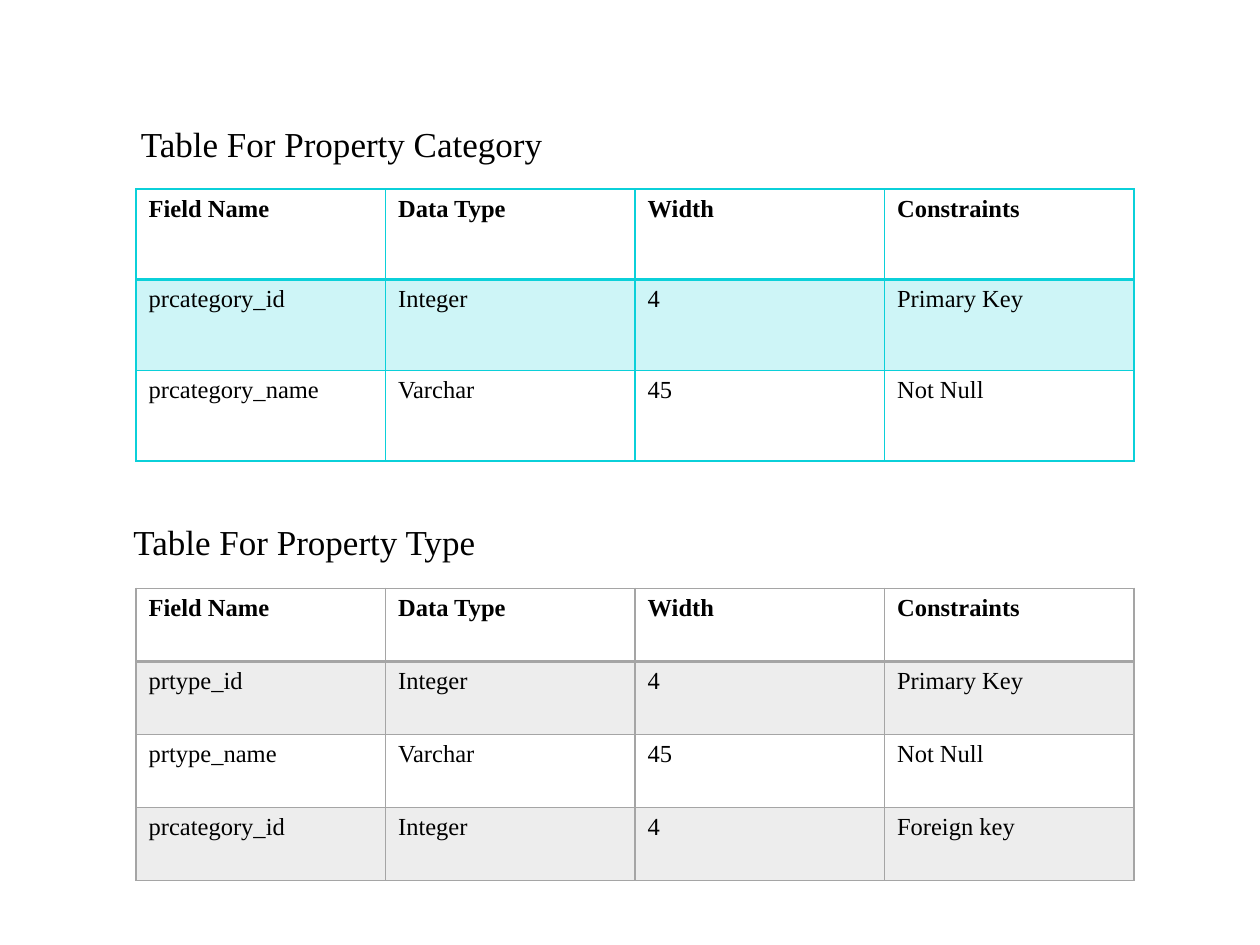
from dataclasses import dataclass

from lxml import etree
from pptx import Presentation
from pptx import util as u
from pptx.dml.color import RGBColor
from pptx.enum import text
from pptx.oxml.ns import qn

PX = 9144  # EMU per px, at 100 px to the inch
FONT = "Times New Roman"
BLACK = RGBColor(0x00, 0x00, 0x00)
TEAL = RGBColor(0x0B, 0xD0, 0xD9)
GRAY = RGBColor(0xA5, 0xA5, 0xA5)
LEFT, COL = 108, 198
HEAD = ("Field Name", "Data Type", "Width", "Constraints")


@dataclass
class Box:
    left: int
    top: int
    width: int
    height: int

    def emu(self) -> list[u.Emu]:
        return [u.Emu(n * PX) for n in (self.left, self.top, self.width, self.height)]


@dataclass
class Section:
    title: str
    label: Box
    top: int
    row: int
    color: RGBColor
    rule: float  # points of the line under the header
    fields: list[tuple[str, ...]]


SECTIONS = [
    Section("Table For Property Category", Box(102, 92, 340, 43), 150, 72, TEAL, 2.25, [
        ("prcategory_id", "Integer", "4", "Primary Key"),
        ("prcategory_name", "Varchar", "45", "Not Null"),
    ]),
    Section("Table For Property Type", Box(96, 408, 295, 43), 467, 58, GRAY, 1.5, [
        ("prtype_id", "Integer", "4", "Primary Key"),
        ("prtype_name", "Varchar", "45", "Not Null"),
        ("prcategory_id", "Integer", "4", "Foreign key"),
    ]),
]


def add_run(frame, words: str, size: int, bold: bool = False) -> None:
    run = frame.paragraphs[0].add_run()
    run.text = words
    run.font.name = FONT
    run.font.size = u.Pt(size)
    run.font.bold = bold
    run.font.color.rgb = BLACK


def add_label(slide, words: str, box: Box) -> None:
    frame = slide.shapes.add_textbox(*box.emu()).text_frame
    frame.word_wrap = False
    frame.auto_size = text.MSO_AUTO_SIZE.SHAPE_TO_FIT_TEXT
    add_run(frame, words, 20)


def tint(cell, color: RGBColor) -> None:
    """Fill the cell with the colour at 20 % opacity."""
    cell.fill.solid()
    cell.fill.fore_color.rgb = color
    tone = cell._tc.tcPr.find(".//" + qn("a:srgbClr"))
    etree.SubElement(tone, qn("a:alpha"), val="20000")


def set_lines(cell, color: RGBColor, top: float, base: float) -> None:
    """Draw the four cell borders; top and base are in points."""
    props = cell._tc.get_or_add_tcPr()
    sides = {"L": 1, "R": 1, "T": top, "B": base}
    for spot, (side, size) in enumerate(sides.items()):
        line = etree.Element(qn(f"a:ln{side}"), w=str(u.Pt(size)))
        fill = etree.SubElement(line, qn("a:solidFill"))
        etree.SubElement(fill, qn("a:srgbClr"), val=str(color))
        props.insert(spot, line)


def add_grid(slide, part: Section) -> None:
    rows = [HEAD, *part.fields]
    box = Box(LEFT, part.top, COL * len(HEAD), part.row * len(rows))
    grid = slide.shapes.add_table(len(rows), len(HEAD), *box.emu()).table
    grid.horz_banding = False
    for r, row in enumerate(rows):
        for c, words in enumerate(row):
            cell = grid.cell(r, c)
            add_run(cell.text_frame, words, 14, bold=r == 0)
            if r % 2:
                tint(cell, part.color)
            else:
                cell.fill.background()
            set_lines(cell, part.color,
                      top=part.rule if r == 1 else 1,
                      base=part.rule if r == 0 else 1)


def main() -> None:
    deck = Presentation()
    deck.slide_width, deck.slide_height = u.Emu(1000 * PX), u.Emu(750 * PX)
    slide = deck.slides.add_slide(deck.slide_layouts[6])
    for part in SECTIONS:
        add_label(slide, part.title, part.label)
        add_grid(slide, part)
    deck.save("out.pptx")


if __name__ == "__main__":
    main()
